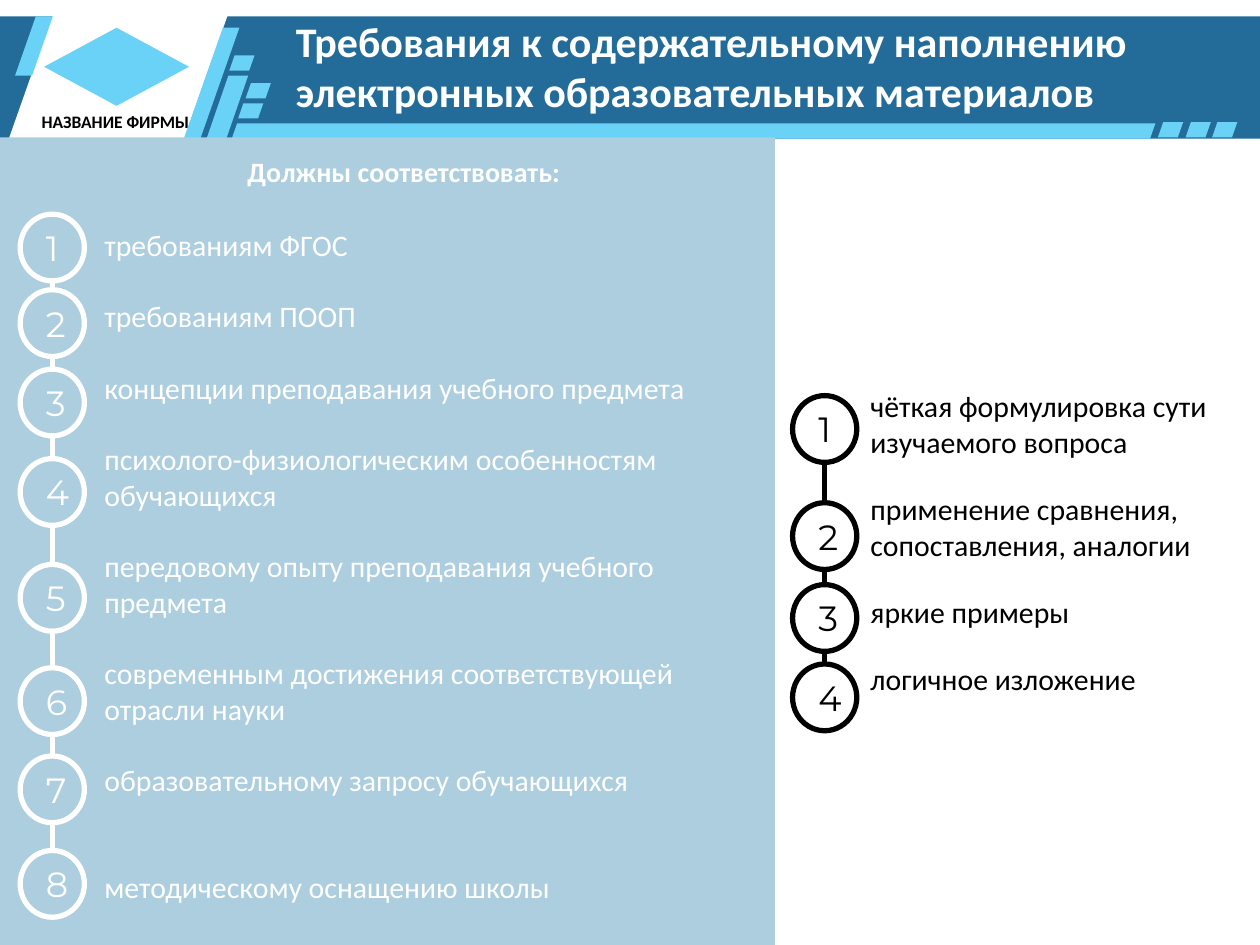
"""Build a slide on content requirements for electronic educational materials."""
from lxml.etree import SubElement
from pptx import Presentation
from pptx.dml.color import RGBColor
from pptx.enum.shapes import MSO_CONNECTOR, MSO_SHAPE
from pptx.enum.text import MSO_ANCHOR, MSO_AUTO_SIZE, PP_ALIGN
from pptx.oxml.ns import qn
from pptx.util import Inches, Pt

COLORS = {
    "header": "236C99",
    "accent": "69D2F6",
    "panel": "ACCEDF",
    "white": "FFFFFF",
    "black": "000000",
}
SLANT = 0.348
STRIPES = [
    (0.12, 0.13, 0.3, 0.47, 0.549),
    (1.46, 0.22, 0.44, 0.88, 0.703),
    (1.64, 0.6, 0.33, 0.5, 0.525),
    (1.84, 0.98, 7.33, 0.12, SLANT),
]
DASHES = [(1.82, 0.44), (1.89, 0.82), (1.95, 0.66), (9.19, 0.97), (9.41, 0.97), (9.62, 0.97)]
LINE_GAP = 20.4
REQUIREMENTS = [
    "требованиям ФГОС",
    "требованиям ПООП",
    "концепции преподавания учебного предмета",
    "психолого-физиологическим особенностям обучающихся",
    "передовому опыту преподавания учебного предмета",
    "современным достижения соответствующей отрасли науки",
    "образовательному запросу обучающихся",
    "методическому оснащению школы",
]
QUALITIES = [
    "чёткая формулировка сути изучаемого вопроса",
    "применение сравнения, сопоставления, аналогии",
    "яркие примеры",
    "логичное изложение",
]


def rgb(name):
    return RGBColor.from_string(COLORS[name])


def style_paragraph(paragraph, size, color, font="Calibri", bold=False, align=None):
    paragraph.font.name = font
    paragraph.font.size = Pt(size)
    paragraph.font.bold = bold
    paragraph.font.color.rgb = rgb(color)
    paragraph.alignment = align


def add_block(slide, kind, left, top, width, height, fill, slant=None):
    shape = slide.shapes.add_shape(kind, Inches(left), Inches(top), Inches(width), Inches(height))
    shape.shadow.inherit = False
    shape.fill.solid()
    shape.fill.fore_color.rgb = rgb(fill)
    shape.line.fill.background()
    if slant is not None:
        shape.adjustments[0] = slant
    return shape


def add_text(slide, left, top, width, height, lines, size, color, bold=False, align=None, gap=0):
    box = slide.shapes.add_textbox(Inches(left), Inches(top), Inches(width), Inches(height))
    frame = box.text_frame
    frame.word_wrap = True
    frame.auto_size = MSO_AUTO_SIZE.SHAPE_TO_FIT_TEXT
    frame.text = "\n".join(lines)
    for paragraph in frame.paragraphs:
        style_paragraph(paragraph, size, color, bold=bold, align=align)
        paragraph.space_after = Pt(gap)
    return frame


def add_number(slide, number, left, top, fill, color):
    circle = add_block(slide, MSO_SHAPE.OVAL, left, top, 0.51, 0.53, fill)
    circle.line.color.rgb = rgb(color)
    circle.line.width = Pt(3)
    frame = circle.text_frame
    frame.text = str(number)
    frame.vertical_anchor = MSO_ANCHOR.MIDDLE
    frame.margin_left = frame.margin_right = Inches(0.13)
    frame.margin_top = frame.margin_bottom = Inches(0.06)
    style_paragraph(frame.paragraphs[0], 20, color, font="Montserrat", align=PP_ALIGN.CENTER)


def add_number_chain(slide, left, tops, line_top, line_bottom, fill, color):
    center = Inches(left + 0.255)
    connector = slide.shapes.add_connector(
        MSO_CONNECTOR.STRAIGHT, center, Inches(line_top), center, Inches(line_bottom))
    connector.line.color.rgb = rgb(color)
    connector.line.width = Pt(3)
    SubElement(connector._element.spPr, qn("a:effectLst"))
    for number, top in enumerate(tops, start=1):
        add_number(slide, number, left, top, fill, color)


def add_header(slide):
    add_block(slide, MSO_SHAPE.RECTANGLE, 0, 0.13, 10, 0.97, "header")
    add_block(slide, MSO_SHAPE.PARALLELOGRAM, 0, 0, 1.85, 1.3, "white", 0.353)
    add_block(slide, MSO_SHAPE.DIAMOND, 0.35, 0.22, 1.15, 0.62, "accent")
    add_text(slide, 0.19, 0.83, 1.45, 0.27, ["НАЗВАНИЕ ФИРМЫ"], 10, "black",
             bold=True, align=PP_ALIGN.CENTER)
    dashes = [(left, top, 0.2, 0.12, SLANT) for left, top in DASHES]
    for left, top, width, height, slant in STRIPES + dashes:
        add_block(slide, MSO_SHAPE.PARALLELOGRAM, left, top, width, height, "accent", slant)
    title = "Требования к содержательному наполнению электронных образовательных материалов"
    add_text(slide, 2.25, 0.07, 7.52, 0.91, [title], 24, "white", bold=True)


def add_requirements(slide):
    add_block(slide, MSO_SHAPE.RECTANGLE, 0, 1.09, 6.15, 6.41, "panel")
    frame = add_text(slide, 0.73, 1.75, 5.3, 5.54, REQUIREMENTS, 17, "white", gap=LINE_GAP)
    frame.paragraphs[-1].space_before = Pt(LINE_GAP)
    frame.paragraphs[-1].space_after = Pt(0)
    add_number_chain(slide, 0.16, [1.7, 2.3, 2.93, 3.64, 4.48, 5.3, 6, 6.75],
                     2.03, 7.11, "panel", "white")
    add_text(slide, 0.62, 1.18, 5.17, 0.37, ["Должны соответствовать:"], 16, "white",
             bold=True, align=PP_ALIGN.CENTER)


def add_qualities(slide):
    add_text(slide, 6.81, 3.03, 3.23, 2.68, QUALITIES, 17, "black", gap=18)
    add_number_chain(slide, 6.29, [3.14, 3.99, 4.64, 5.27], 3.47, 5.71, "white", "black")


def main():
    presentation = Presentation()
    presentation.slide_width = Inches(10)
    presentation.slide_height = Inches(7.5)
    slide = presentation.slides.add_slide(presentation.slide_layouts[6])
    add_header(slide)
    add_requirements(slide)
    add_qualities(slide)
    presentation.save("out.pptx")


if __name__ == "__main__":
    main()
